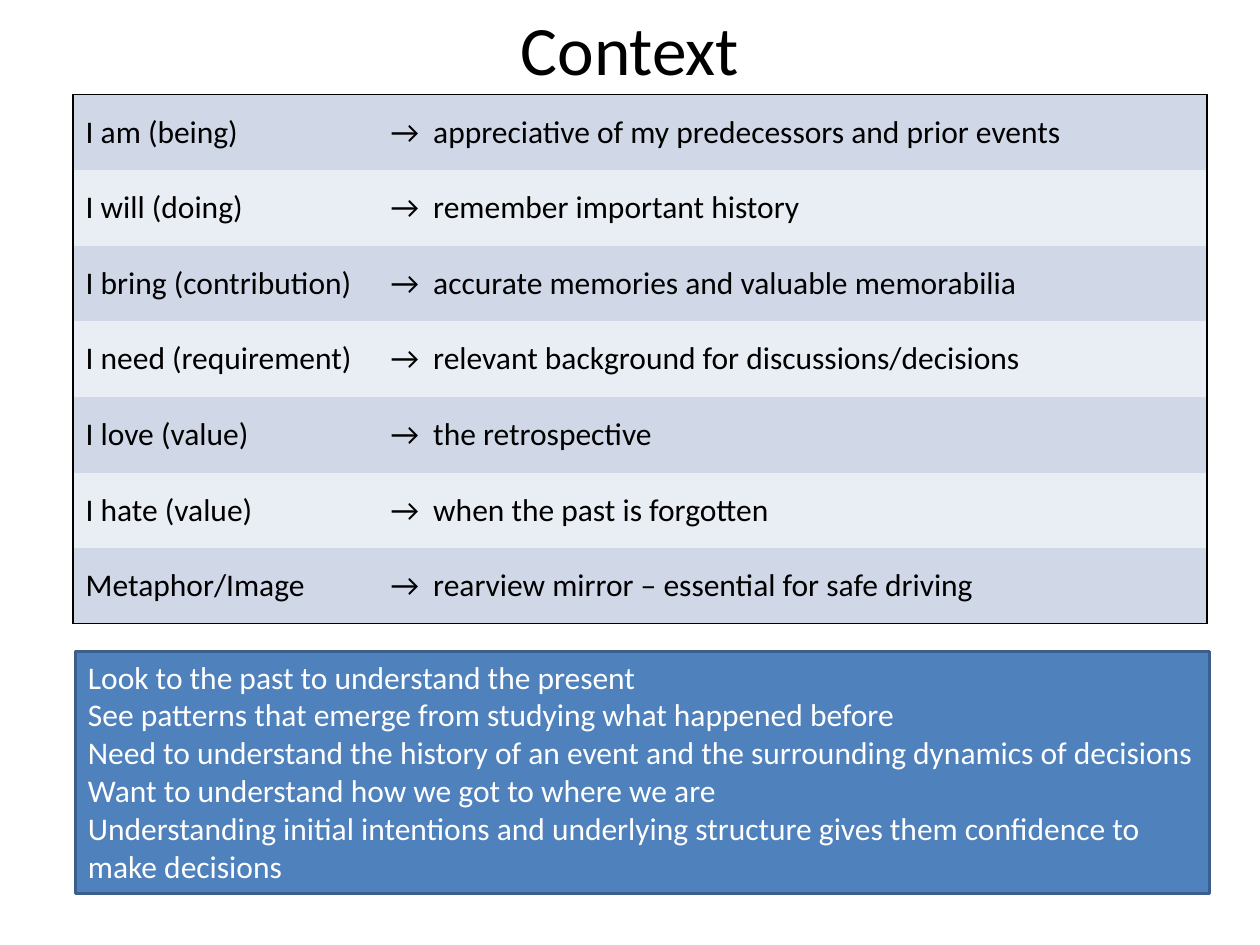
from lxml.etree import SubElement
from pptx import Presentation
from pptx.dml.color import RGBColor
from pptx.enum.shapes import MSO_SHAPE as Preset
from pptx.enum.text import MSO_ANCHOR as Anchor, MSO_AUTO_SIZE as AutoSize, PP_ALIGN as Align
from pptx.oxml import parse_xml
from pptx.oxml.ns import nsdecls, qn
from pptx.util import Pt

STATEMENTS = [
    ("I am (being)", "appreciative of my predecessors and prior events"),
    ("I will (doing)", "remember important history"),
    ("I bring (contribution)", "accurate memories and valuable memorabilia"),
    ("I need (requirement)", "relevant background for discussions/decisions"),
    ("I love (value)", "the retrospective"),
    ("I hate (value)", "when the past is forgotten"),
    ("Metaphor/Image", "rearview mirror – essential for safe driving"),
]
INSIGHTS = [
    "Look to the past to understand the present",
    "See patterns that emerge from studying what happened before",
    "Need to understand the history of an event and the surrounding dynamics of decisions",
    "Want to understand how we got to where we are",
    "Understanding initial intentions and underlying structure gives them confidence to make decisions",
]
BANDS = ["D0D8E8", "E9EDF4"]
COLUMN_WIDTHS = [174.24, 473.76]
ROW_HEIGHT = 43.2
PLAIN_STYLE = "{2D5ABB26-0587-4C30-8999-92F81FD0307C}"


def color(value):
    return RGBColor.from_string(value)


def place(shape, left, top, width, height):
    shape.left, shape.top = Pt(left), Pt(top)
    shape.width, shape.height = Pt(width), Pt(height)


def format_text(frame, size, text_color, align=Align.LEFT):
    for paragraph in frame.paragraphs:
        paragraph.alignment = align
        paragraph.font.name = "Calibri"
        paragraph.font.size = Pt(size)
        paragraph.font.color.rgb = color(text_color)


def add_title(slide, text):
    title = slide.shapes.title
    place(title, 36, 12.24, 648, 30.24)
    frame = title.text_frame
    frame.text = text
    frame.auto_size = AutoSize.NONE
    frame.vertical_anchor = Anchor.MIDDLE
    format_text(frame, 39.6, "000000", Align.CENTER)


def add_borders(cell, sides):
    properties = cell._tc.get_or_add_tcPr()
    for position, side in enumerate(sides):
        border = parse_xml(
            f'<a:ln{side} {nsdecls("a")} w="12700"><a:solidFill>'
            f'<a:srgbClr val="000000"/></a:solidFill></a:ln{side}>'
        )
        properties.insert(position, border)


def add_statements(slide):
    last_row = len(STATEMENTS) - 1
    table = slide.shapes.add_table(
        len(STATEMENTS), 2, Pt(41.76), Pt(54), Pt(sum(COLUMN_WIDTHS)),
        Pt(ROW_HEIGHT * len(STATEMENTS)),
    ).table
    table.first_row = table.horz_banding = False
    table._tbl.tblPr.find(qn("a:tableStyleId")).text = PLAIN_STYLE
    for column, width in zip(table.columns, COLUMN_WIDTHS):
        column.width = Pt(width)
    for row, (role, answer) in enumerate(STATEMENTS):
        table.rows[row].height = Pt(ROW_HEIGHT)
        for column, text in enumerate([role, f"→  {answer}"]):
            cell = table.cell(row, column)
            cell.text = text
            cell.vertical_anchor = Anchor.MIDDLE
            cell.fill.solid()
            cell.fill.fore_color.rgb = color(BANDS[row % 2])
            format_text(cell.text_frame, 18, "000000")
            sides = ["LR"[column]]
            if row == 0:
                sides.append("T")
            if row == last_row:
                sides.append("B")
            add_borders(cell, sides)


def add_insights(slide):
    panel = slide.shapes.add_shape(Preset.RECTANGLE, Pt(43.2), Pt(372.24), Pt(648), Pt(138.24))
    panel.shadow.inherit = False
    panel.fill.solid()
    panel.fill.fore_color.rgb = color("4F81BD")
    panel.line.color.rgb = color("3A5F8C")
    panel.line.width = Pt(2)
    frame = panel.text_frame
    frame.text = "\n".join(INSIGHTS)
    frame.word_wrap = True
    frame.auto_size = AutoSize.SHAPE_TO_FIT_TEXT
    frame.vertical_anchor = Anchor.TOP
    format_text(frame, 18, "FFFFFF")


def main():
    deck = Presentation()
    deck.slide_width, deck.slide_height = Pt(720), Pt(540)
    slide = deck.slides.add_slide(deck.slide_layouts[5])
    add_title(slide, "Context")
    add_statements(slide)
    add_insights(slide)
    deck.save("out.pptx")


if __name__ == "__main__":
    main()
